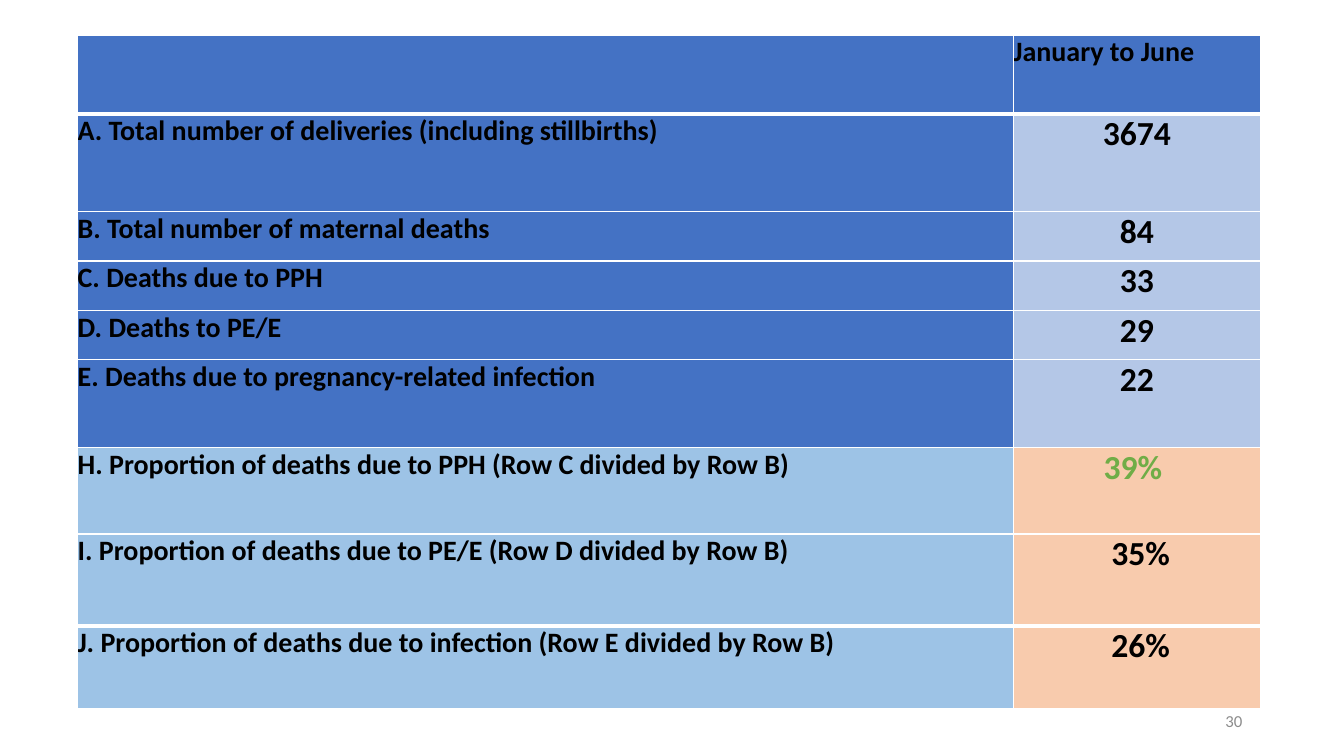
from lxml import etree
from pptx import Presentation
from pptx import util as u
from pptx.dml.color import RGBColor
from pptx.enum import text
from pptx.oxml.ns import qn

PX = 9144  # EMU per px, 100 px to the inch
COLORS = {
    "blue": "4472C4", "pale_blue": "B4C7E7", "sky": "9DC3E6", "peach": "F8CBAD",
    "black": "000000", "white": "FFFFFF", "green": "70AD47", "gray": "8C8C8C",
}
LEFT, CENTER, RIGHT = text.PP_ALIGN.LEFT, text.PP_ALIGN.CENTER, text.PP_ALIGN.RIGHT


class SlideBuilder:
    def __init__(self, deck):
        self.font = "Calibri"
        self.page = deck.slides.add_slide(deck.slide_layouts[6])

    def color(self, name):
        return RGBColor.from_string(COLORS[name])

    def set_words(self, para, words, size, color, align, bold=False):
        para.text = words
        para.alignment = align
        for span in para.runs:
            span.font.name = self.font
            span.font.size = u.Pt(size)
            span.font.bold = bold
            span.font.color.rgb = self.color(color)

    def text_box(self, area, words, size, color, align):
        box = self.page.shapes.add_textbox(*(n * PX for n in area))
        frame = box.text_frame
        frame.word_wrap = True
        frame.vertical_anchor = text.MSO_ANCHOR.MIDDLE
        self.set_words(frame.paragraphs[0], words, size, color, align)

    def table(self, left, top, widths, heights):
        frame = self.page.shapes.add_table(
            len(heights), len(widths), left * PX, top * PX,
            sum(widths) * PX, sum(heights) * PX)
        for column, width in zip(frame.table.columns, widths):
            column.width = width * PX
        for row, height in zip(frame.table.rows, heights):
            row.height = height * PX
        return frame.table

    def borders(self, cell, **points):
        properties = cell._tc.get_or_add_tcPr()
        for side in "LRTB":
            width = str(u.Pt(points.get(side, 1)))
            line = etree.SubElement(properties, qn(f"a:ln{side}"), w=width)
            fill = etree.SubElement(line, qn("a:solidFill"))
            etree.SubElement(fill, qn("a:srgbClr"), val=COLORS["white"])

    def cell(self, cell, words, fill, size, color, align, top, bottom):
        self.borders(cell, T=top, B=bottom)
        cell.fill.solid()
        cell.fill.fore_color.rgb = self.color(fill)
        cell.margin_left = cell.margin_right = cell.margin_top = cell.margin_bottom = 0
        para = cell.text_frame.paragraphs[0]
        para.space_after = u.Pt(8)
        self.set_words(para, words, size, color, align, bold=True)


# Row height, label, value, value colour
ROWS = [
    (78, "", "January to June", "black"),
    (97, "A. Total number of deliveries (including stillbirths)", "3674", "black"),
    (49, "B. Total number of maternal deaths", "84", "black"),
    (49, "C. Deaths due to PPH", "33", "black"),
    (49, "D. Deaths to PE/E", "29", "black"),
    (87, "E. Deaths due to pregnancy-related infection", "22", "black"),
    (86, "H. Proportion of deaths due to PPH (Row C divided by Row B)", "39% ", "green"),
    (91, "I. Proportion of deaths due to PE/E (Row D divided by Row B)", " 35%", "black"),
    (82, "J. Proportion of deaths due to infection (Row E divided by Row B)", " 26%", "black"),
]
FIRST_PROPORTION = 6
THICK_EDGES = {1, len(ROWS) - 1}  # edges above these rows


def main():
    deck = Presentation()
    deck.slide_width, deck.slide_height = 1333 * PX, 750 * PX
    builder = SlideBuilder(deck)

    # Table of deliveries and deaths
    table = builder.table(77, 35, [928, 245], [row[0] for row in ROWS])
    for index, (_, label, value, value_color) in enumerate(ROWS):
        top, bottom = (3 if edge in THICK_EDGES else 1 for edge in (index, index + 1))
        if index == 0:
            label_fill, value_fill, size, align = "blue", "blue", 20, LEFT
        elif index < FIRST_PROPORTION:
            label_fill, value_fill, size, align = "blue", "pale_blue", 24, CENTER
        else:
            label_fill, value_fill, size, align = "sky", "peach", 24, CENTER
        builder.cell(table.cell(index, 0), label, label_fill, 20, "black", LEFT, top, bottom)
        builder.cell(table.cell(index, 1), value, value_fill, size, value_color, align,
                     top, bottom)

    # Page number
    builder.text_box((942, 695, 300, 40), "30", 12, "gray", RIGHT)

    deck.save("out.pptx")


if __name__ == "__main__":
    main()
